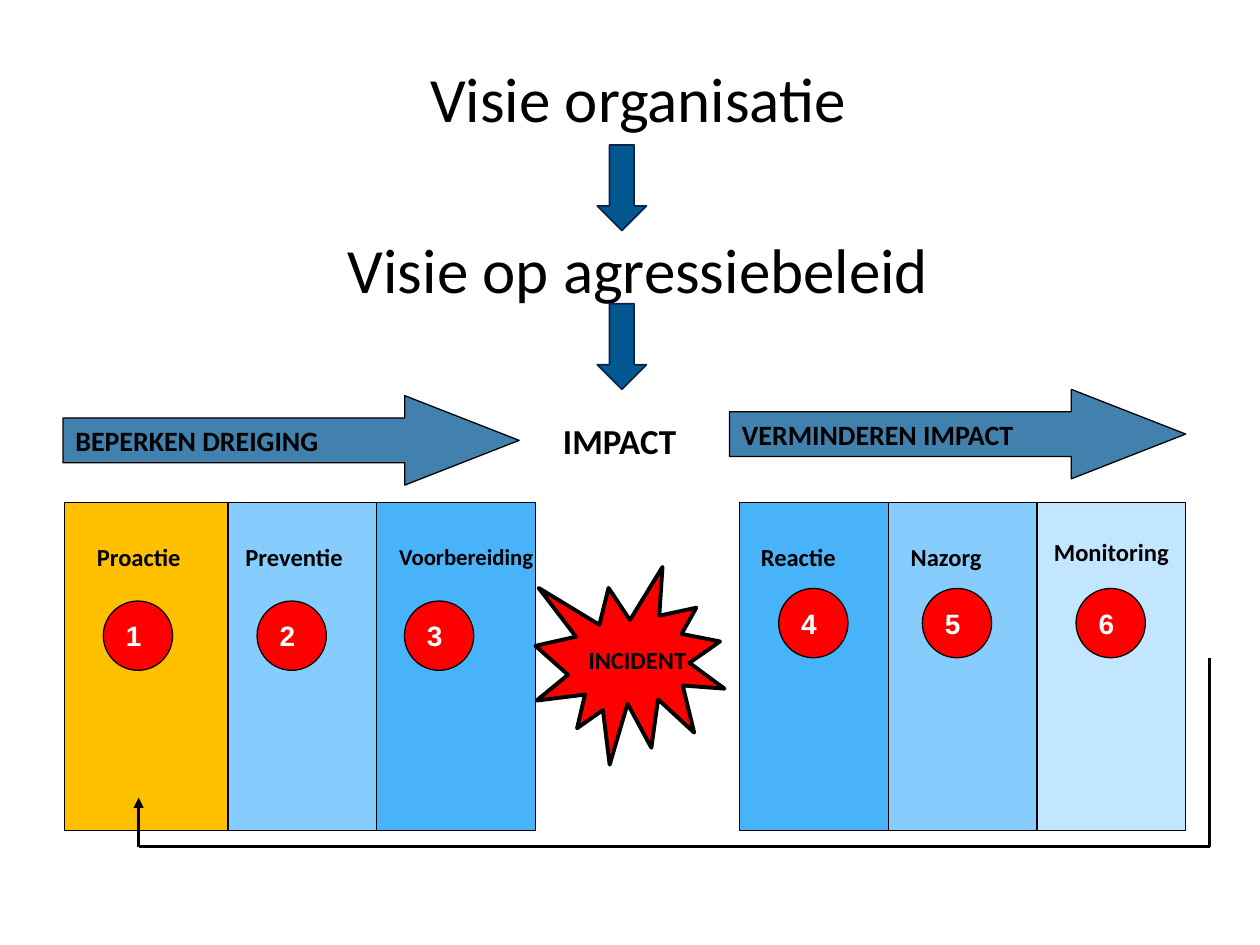
from collections import namedtuple

from lxml import etree
from pptx import Presentation
from pptx import util as u
from pptx.dml.color import RGBColor
from pptx.enum import shapes, text
from pptx.oxml.ns import qn

COLUMNS, ROWS = 100, 75  # slide grid; every Box is in these units
Box = namedtuple("Box", "left top width height")
Phase = namedtuple("Phase", "name colour width label_indent disc_indent")

THEME = {
    "black": "000000", "white": "FFFFFF", "red": "FF0000", "amber": "FFC000",
    "strong": "49B3FA", "medium": "86CCFC", "pale": "C2E6FD",
    "navy": "045892", "navy_edge": "0B244B",
    "body": "Calibri", "digits": "Arial",
    "title": 36, "impact": 20, "banner": 16, "label": 14, "long_label": 13,
}
SHAPE = shapes.MSO_SHAPE
LEFT, CENTER = text.PP_ALIGN.LEFT, text.PP_ALIGN.CENTER

THREAT = [
    Phase("Proactie", "amber", 13, 1.6, 3.1),
    Phase("Preventie", "medium", 11.8, 0.4, 2.3),
    Phase("Voorbereiding", "strong", 12.6, 0.8, 2.2),
]
RECOVERY = [
    Phase("Reactie", "strong", 11.8, 0.7, 3.1),
    Phase("Nazorg", "medium", 11.8, 0.8, 2.7),
    Phase("Monitoring", "pale", 11.8, 0, 3.1),
]


def rgb(name):
    return RGBColor.from_string(THEME[name])


def grid(deck, *cells):
    """Turn alternating column and row counts into lengths."""
    units = (deck.slide_width / COLUMNS, deck.slide_height / ROWS)
    return [u.Emu(round(cell * units[i % 2])) for i, cell in enumerate(cells)]


def set_all(target, values):
    for name, value in values.items():
        setattr(target, name, value)


def write(para, words, size, colour="black", font="body", bold=True, align=LEFT):
    para.alignment = align
    span = para.add_run()
    span.text = words
    set_all(span.font, {"name": THEME[font], "size": u.Pt(THEME[size]), "bold": bold})
    span.font.color.rgb = rgb(colour)


def add_block(deck, page, kind, box, fill, edge="black", weight=0.75):
    block = page.shapes.add_shape(kind, *grid(deck, *box))
    block.shadow.inherit = False
    block.fill.solid()
    block.fill.fore_color.rgb = rgb(fill)
    if edge:
        block.line.color.rgb = rgb(edge)
        block.line.width = u.Pt(weight)
    else:
        block.line.fill.background()
    set_all(block.text_frame, {"word_wrap": False,
                               "vertical_anchor": text.MSO_ANCHOR.MIDDLE})
    return block


def add_phases(deck, page, box, phases, first_number, disc_drop):
    left = box.left
    for number, phase in enumerate(phases, first_number):
        panel = add_block(deck, page, SHAPE.RECTANGLE,
                          Box(left, box.top, phase.width, box.height), phase.colour)
        if phase.label_indent:
            label = add_block(deck, page, SHAPE.RECTANGLE,
                              Box(left + phase.label_indent, box.top + 2.3,
                                  phase.width - 2.8, 3.9), phase.colour, None)
            size = "long_label" if len(phase.name) > 10 else "label"
            write(label.text_frame.paragraphs[0], phase.name, size)
        else:
            set_all(panel.text_frame, {"vertical_anchor": text.MSO_ANCHOR.TOP,
                                       "margin_top": u.Inches(0.27)})
            write(panel.text_frame.paragraphs[0], phase.name, "label", align=CENTER)
        disc = add_block(deck, page, SHAPE.OVAL,
                         Box(left + phase.disc_indent, box.top + disc_drop, 5.5, 5.5),
                         "red")
        write(disc.text_frame.paragraphs[0], str(number), "banner", "white", "digits")
        left += phase.width


def add_banner(deck, page, box, words):
    banner = add_block(deck, page, SHAPE.RIGHT_ARROW, box, "navy")
    banner.adjustments[0], banner.adjustments[1] = 0.5, 1.278
    colour = banner.fill._xPr.find(qn("a:solidFill"))[0]
    etree.SubElement(colour, qn("a:alpha"), val="75000")
    write(banner.text_frame.paragraphs[0], words, "banner")


def add_incident(deck, page, box):
    burst = add_block(deck, page, SHAPE.EXPLOSION1, box, "red", weight=2.25)
    write(burst.text_frame.paragraphs[0], "INCIDENT", "label")


def add_impact(deck, page, box):
    impact = add_block(deck, page, SHAPE.RECTANGLE, box, "white", None)
    write(impact.text_frame.paragraphs[0], "IMPACT", "impact")


def add_feedback(deck, page, box, arrow_rise):
    """Lead from the last phase down the right side and back up to the first."""
    right, bottom = box.left + box.width, box.top + box.height
    corners = [(right, box.top), (right, bottom), (box.left, bottom),
               (box.left, bottom - arrow_rise)]
    for start, end in zip(corners, corners[1:]):
        line = page.shapes.add_connector(shapes.MSO_CONNECTOR.STRAIGHT,
                                         *grid(deck, *start, *end))
        line.line.color.rgb = rgb("black")
        line.line.width = u.Pt(1.5)
        etree.SubElement(line._element.spPr, qn("a:effectLst"))
    etree.SubElement(line.line._get_or_add_ln(), qn("a:tailEnd"), type="triangle")


def add_vision(deck, page, box):
    vision = page.shapes.add_textbox(*grid(deck, *box)).text_frame
    vision.word_wrap = True
    first, second = vision.paragraphs[0], vision.add_paragraph()
    second.space_before = u.Pt(55)
    for para, words in ((first, "Visie organisatie"),
                        (second, "Visie op agressiebeleid")):
        write(para, words, "title", bold=False, align=CENTER)
    for top in (11.5, 24.1):
        add_block(deck, page, SHAPE.DOWN_ARROW, Box(47.4, top, 3.9, 6.8),
                  "navy", "navy_edge", 1)


def main():
    deck = Presentation()
    set_all(deck, {"slide_width": u.Inches(10), "slide_height": u.Inches(7.5)})
    page = deck.slides.add_slide(deck.slide_layouts[6])
    add_phases(deck, page, Box(5.1, 39.9, 37.4, 26), THREAT, 1, 7.8)
    add_phases(deck, page, Box(58.7, 39.9, 35.4, 26), RECOVERY, 4, 6.8)
    add_incident(deck, page, Box(42.5, 45, 15, 15.7))
    add_banner(deck, page, Box(5, 31.4, 36.2, 7.1), "BEPERKEN DREIGING")
    add_banner(deck, page, Box(57.9, 30.9, 36.2, 7.1), "VERMINDEREN IMPACT")
    add_impact(deck, page, Box(43.7, 29.1, 12.6, 11.8))
    add_feedback(deck, page, Box(11, 52.2, 85, 15), 3.9)
    add_vision(deck, page, Box(23.6, 4.2, 54.1, 20.7))
    deck.save("out.pptx")


if __name__ == "__main__":
    main()
